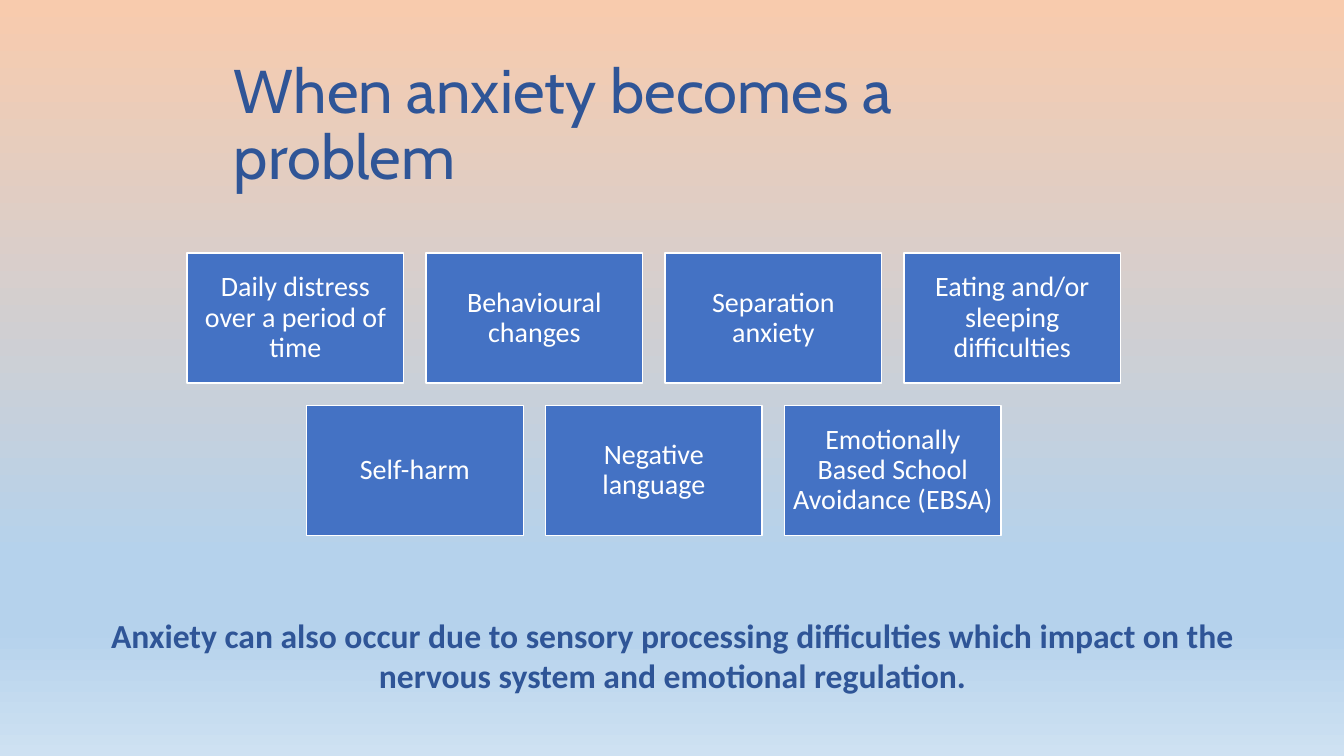
"""Build the slide on when anxiety becomes a problem."""
from dataclasses import dataclass

from lxml import etree
from pptx import Presentation
from pptx.dml.color import RGBColor
from pptx.enum import shapes, text
from pptx.oxml import ns
from pptx.util import Inches, Pt

HEADING = "When anxiety becomes a problem"
SIGN_ROWS = [
    ["Daily distress over a period of time", "Behavioural changes",
     "Separation anxiety", "Eating and/or sleeping difficulties"],
    ["Self-harm", "Negative language",
     "Emotionally Based School Avoidance (EBSA)"],
]
SENSORY_NOTE = ("Anxiety can also occur due to sensory processing difficulties "
                "which impact on the nervous system and emotional regulation.")


@dataclass(frozen=True)
class Theme:
    """Colours, fonts and type sizes of the slide."""
    ink: str = "2F5597"
    box: str = "4472C4"
    white: str = "FFFFFF"
    sky: tuple = ((0, "F8CBAD"), (74, "B5D2EC"), (83, "B5D2EC"), (100, "CEE1F2"))
    heading_font: str = "Cabin"
    body_font: str = "Calibri"
    heading_size: int = 44
    sign_size: int = 20
    note_size: int = 24


THEME = Theme()
BOX_WIDTH, BOX_HEIGHT, GAP = 2.15, 1.29, 0.22
GRID_CENTRE, GRID_TOP = 6.485, 2.51
INSET = 0.08


def paint_background(slide):
    """Fill the background with the vertical sky gradient."""
    fill = slide.background.fill
    fill.gradient()
    fill.gradient_angle = 270
    stops = slide.element.find(".//" + ns.qn("a:gsLst"))
    for old_stop in list(stops):
        stops.remove(old_stop)
    for percent, colour in THEME.sky:
        stop = etree.SubElement(stops, ns.qn("a:gs"), pos=str(percent * 1000))
        etree.SubElement(stop, ns.qn("a:srgbClr"), val=colour)


def write(frame, words, font, size, colour, align, spacing=1.0, bold=False):
    """Write one formatted paragraph into a text frame."""
    frame.word_wrap = True
    frame.auto_size = text.MSO_AUTO_SIZE.NONE
    paragraph = frame.paragraphs[0]
    paragraph.alignment = align
    paragraph.line_spacing = spacing
    run = paragraph.add_run()
    run.text = words
    run.font.name = font
    run.font.size = Pt(size)
    run.font.bold = bold
    run.font.color.rgb = RGBColor.from_string(colour)


def add_heading(slide):
    """Place the title."""
    heading = slide.shapes.title
    heading.left, heading.top = Inches(2.22), Inches(0.53)
    heading.width, heading.height = Inches(8.89), Inches(1.45)
    heading.text_frame.vertical_anchor = text.MSO_ANCHOR.MIDDLE
    write(heading.text_frame, HEADING, THEME.heading_font, THEME.heading_size,
          THEME.ink, text.PP_ALIGN.LEFT, 0.9)


def add_sign(slide, words, left, top):
    """Add one box naming a sign of anxiety."""
    sign = slide.shapes.add_shape(
        shapes.MSO_SHAPE.RECTANGLE, Inches(left), Inches(top),
        Inches(BOX_WIDTH), Inches(BOX_HEIGHT))
    sign.shadow.inherit = False
    sign.fill.solid()
    sign.fill.fore_color.rgb = RGBColor.from_string(THEME.box)
    sign.line.color.rgb = RGBColor.from_string(THEME.white)
    sign.line.width = Pt(1)
    frame = sign.text_frame
    frame.margin_left = frame.margin_right = Inches(INSET)
    frame.margin_top = frame.margin_bottom = Inches(INSET)
    frame.vertical_anchor = text.MSO_ANCHOR.MIDDLE
    write(frame, words, THEME.body_font, THEME.sign_size, THEME.white,
          text.PP_ALIGN.CENTER, 0.9)


def add_signs(slide):
    """Centre each row of boxes on the same axis."""
    for row, signs in enumerate(SIGN_ROWS):
        row_width = len(signs) * (BOX_WIDTH + GAP) - GAP
        row_left = GRID_CENTRE - row_width / 2
        top = GRID_TOP + row * (BOX_HEIGHT + GAP)
        for column, words in enumerate(signs):
            add_sign(slide, words, row_left + column * (BOX_WIDTH + GAP), top)


def add_note(slide):
    """Add the closing statement."""
    note = slide.shapes.add_textbox(
        Inches(0.78), Inches(6.05), Inches(11.78), Inches(0.91))
    write(note.text_frame, SENSORY_NOTE, THEME.body_font, THEME.note_size,
          THEME.ink, text.PP_ALIGN.CENTER, bold=True)


def main():
    """Assemble and save the slide."""
    deck = Presentation()
    deck.slide_width, deck.slide_height = Inches(13.33), Inches(7.5)
    slide = deck.slides.add_slide(deck.slide_layouts.get_by_name("Title Only"))
    paint_background(slide)
    add_heading(slide)
    add_signs(slide)
    add_note(slide)
    deck.save("out.pptx")


if __name__ == "__main__":
    main()
